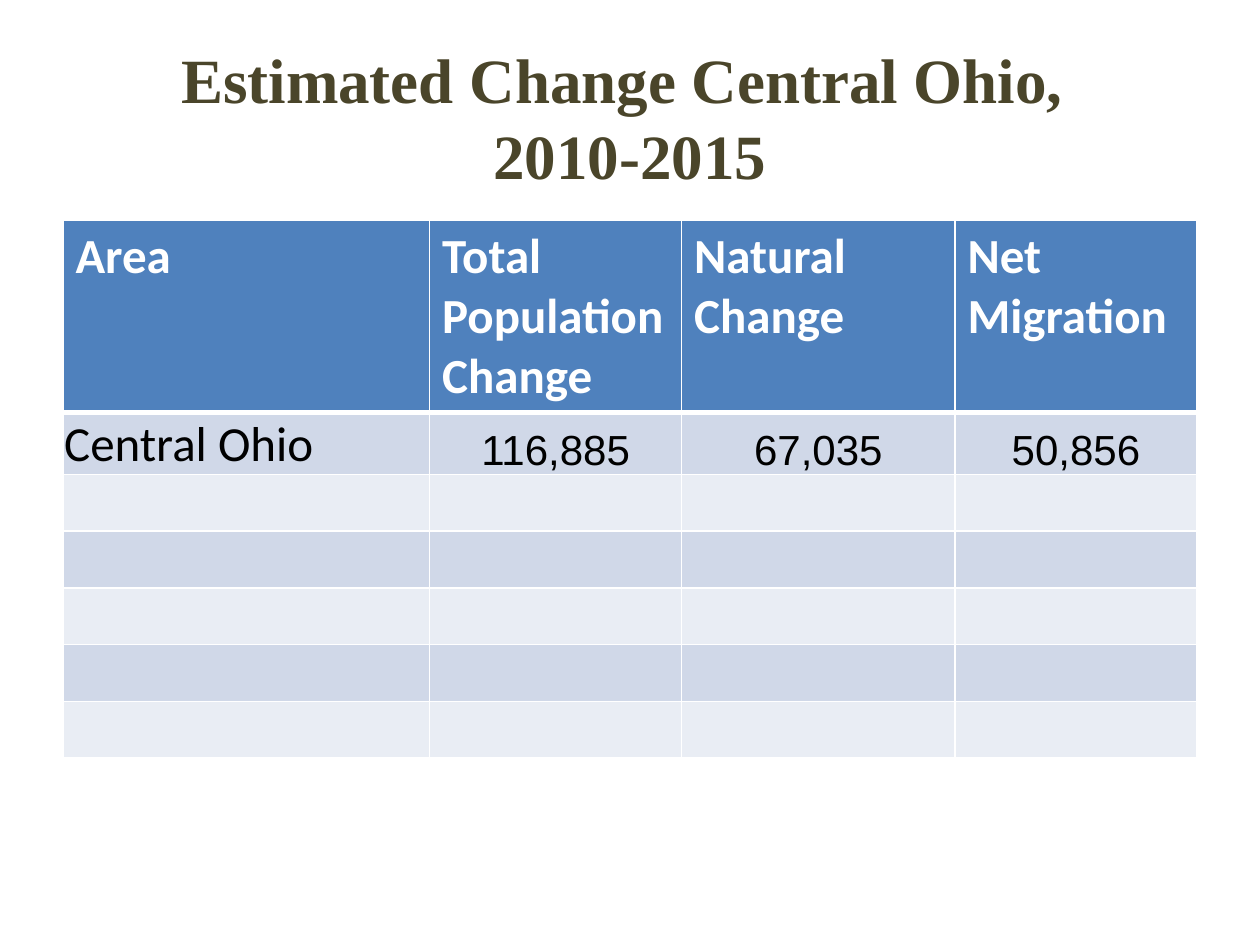
from lxml import etree
from pptx import Presentation
from pptx import util as u
from pptx.dml.color import RGBColor
from pptx.enum import text
from pptx.oxml.ns import qn

Inches = u.Inches
COLORS = {
    "title": "4A452A",
    "header": "4F81BD",
    "dark_band": "D0D8E8",
    "light_band": "E9EDF4",
    "white": "FFFFFF",
    "black": "000000",
}
HEADINGS = ["Area", "Total Population Change", "Natural Change", "Net Migration"]
FIGURES = ["Central Ohio", "116,885", "67,035", "50,856"]
COLUMN_WIDTHS = [2.91, 2, 2.17, 1.92]
ROW_HEIGHTS = [1.52, 0.49] + [0.45] * 5


def write(frame, content, font="Calibri", size=28, color="black", bold=False, align=None):
    para = frame.paragraphs[0]
    para.text = content
    para.alignment = align
    for span in para.runs:
        span.font.name = font
        span.font.size = u.Pt(size)
        span.font.bold = bold
        span.font.color.rgb = RGBColor.from_string(COLORS[color])
    for line_break in para._p.findall(qn("a:br")):
        etree.SubElement(line_break, qn("a:rPr"), sz=str(size * 100))


def place_title(page, left, top, width, height):
    box = page.shapes.title
    box.left, box.top = Inches(left), Inches(top)
    box.width, box.height = Inches(width), Inches(height)
    frame = box.text_frame
    frame.auto_size = text.MSO_AUTO_SIZE.NONE
    frame.vertical_anchor = text.MSO_ANCHOR.MIDDLE
    write(frame, "Estimated Change Central Ohio, \v2010-2015", font="Times New Roman",
          size=36, color="title", bold=True, align=text.PP_ALIGN.CENTER)


def style_cell(cell, fill, bottom=1, top=1):
    properties = cell._tc.get_or_add_tcPr()
    for side, points in (("L", 1), ("R", 1), ("T", top), ("B", bottom)):
        line = etree.SubElement(properties, qn(f"a:ln{side}"), w=str(u.Pt(points)))
        solid = etree.SubElement(line, qn("a:solidFill"))
        etree.SubElement(solid, qn("a:srgbClr"), val=COLORS["white"])
    cell.fill.solid()
    cell.fill.fore_color.rgb = RGBColor.from_string(COLORS[fill])


def place_table(page, left, top, width, height):
    table = page.shapes.add_table(len(ROW_HEIGHTS), len(COLUMN_WIDTHS), Inches(left),
                                  Inches(top), Inches(width), Inches(height)).table
    table.horz_banding = False
    for column, size in zip(table.columns, COLUMN_WIDTHS):
        column.width = Inches(size)
    for index, (row, size) in enumerate(zip(table.rows, ROW_HEIGHTS)):
        row.height = Inches(size)
        band = "dark_band" if index % 2 else "light_band"
        for cell in row.cells:
            style_cell(cell, band if index else "header",
                       bottom=1 if index else 3, top=3 if index == 1 else 1)
    for column, (heading, figure) in enumerate(zip(HEADINGS, FIGURES)):
        write(table.cell(0, column).text_frame, heading, color="white", bold=True)
        cell = table.cell(1, column)
        cell.margin_left = cell.margin_right = cell.margin_top = Inches(0.01)
        cell.margin_bottom = 0
        cell.vertical_anchor = text.MSO_ANCHOR.BOTTOM
        if column:
            write(cell.text_frame, figure, font="Arial", size=24,
                  align=text.PP_ALIGN.CENTER)
        else:
            write(cell.text_frame, figure)


def main():
    deck = Presentation()
    deck.slide_width, deck.slide_height = Inches(10), Inches(7.5)
    page = deck.slides.add_slide(deck.slide_layouts[5])
    place_title(page, 0.5, 0.3, 9, 1.25)
    place_table(page, 0.5, 1.75, sum(COLUMN_WIDTHS), sum(ROW_HEIGHTS))
    deck.save("out.pptx")


if __name__ == "__main__":
    main()
